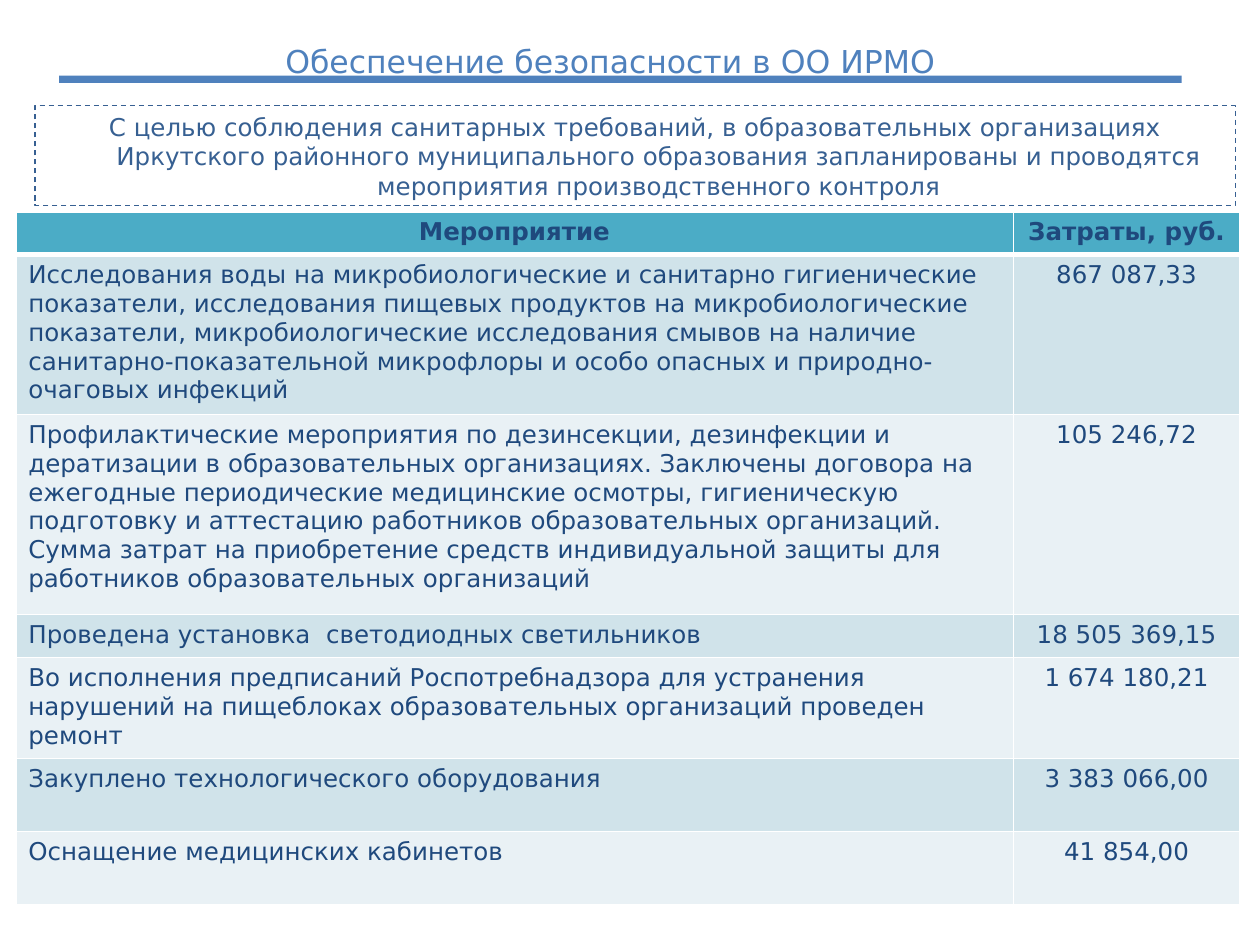
from typing import NamedTuple

from lxml.etree import SubElement
from pptx import Presentation
from pptx.dml.color import RGBColor
from pptx.enum.dml import MSO_LINE
from pptx.enum.shapes import MSO_SHAPE
from pptx.enum.text import MSO_ANCHOR, PP_ALIGN
from pptx.oxml.ns import qn
from pptx.util import Pt

FONT = "DejaVu Sans"
BLUE = RGBColor(0x4F, 0x81, 0xBD)
DARK_BLUE = RGBColor(0x37, 0x60, 0x92)
NAVY = RGBColor(0x1F, 0x49, 0x7D)
TEAL = RGBColor(0x4B, 0xAC, 0xC6)
BAND_DARK = RGBColor(0xD0, 0xE3, 0xEA)
BAND_LIGHT = RGBColor(0xE9, 0xF1, 0xF5)
WHITE = RGBColor(0xFF, 0xFF, 0xFF)


class Row(NamedTuple):
    activity: str
    cost: str
    height: float


HEADER = Row("Мероприятие", "Затраты, руб.", 24.5)
EXPENSES = [
    Row("Исследования воды на микробиологические и санитарно гигиенические "
        "показатели, исследования пищевых продуктов на микробиологические "
        "показатели, микробиологические исследования смывов на наличие "
        "санитарно-показательной микрофлоры и особо опасных и "
        "природно-очаговых инфекций", "867 087,33", 87.1),
    Row("Профилактические мероприятия по дезинсекции, дезинфекции и "
        "дератизации в образовательных организациях. Заключены договора на "
        "ежегодные периодические медицинские осмотры, гигиеническую "
        "подготовку и аттестацию работников образовательных организаций. "
        "Сумма затрат на приобретение средств индивидуальной защиты для "
        "работников образовательных организаций", "105 246,72", 114.5),
    Row("Проведена установка  светодиодных светильников", "18 505 369,15", 24.5),
    Row("Во исполнения предписаний Роспотребнадзора для устранения "
        "нарушений на пищеблоках образовательных организаций проведен "
        "ремонт", "1 674 180,21", 53.3),
    Row("Закуплено технологического оборудования", "3 383 066,00", 41.8),
    Row("Оснащение медицинских кабинетов", "41 854,00", 41.8),
]


def write(tf, text: str, size: float, color: RGBColor,
          align: PP_ALIGN = PP_ALIGN.CENTER, bold: bool = False):
    """Fill the first paragraph of a text frame and return it."""
    tf.word_wrap = True
    p = tf.paragraphs[0]
    p.alignment = align
    r = p.add_run()
    r.text = text
    r.font.name, r.font.size, r.font.bold = FONT, Pt(size), bold
    r.font.color.rgb = color
    return p


def add_border(cell, side: str, width: float) -> None:
    ln = SubElement(cell._tc.get_or_add_tcPr(), qn(f"a:ln{side}"), w=str(Pt(width)))
    fill = SubElement(ln, qn("a:solidFill"))
    SubElement(fill, qn("a:srgbClr"), val=str(WHITE))


def fill_row(table, index: int, row: Row) -> None:
    """Write one table row; the first is the header, the rest are banded."""
    header = index == 0
    fill = TEAL if header else (BAND_DARK if index % 2 else BAND_LIGHT)
    table.rows[index].height = Pt(row.height)
    for col, text in enumerate((row.activity, row.cost)):
        cell = table.cell(index, col)
        for side in "LRTB":
            thick = (header and side == "B") or (index == 1 and side == "T")
            add_border(cell, side, 3 if thick else 1)
        cell.fill.solid()
        cell.fill.fore_color.rgb = fill
        align = PP_ALIGN.CENTER if header or col else PP_ALIGN.LEFT
        write(cell.text_frame, text, 14, NAVY, align, header)


def main() -> None:
    prs = Presentation()
    prs.slide_width, prs.slide_height = Pt(720), Pt(540)
    s = prs.slides.add_slide(prs.slide_layouts[5])

    # Title and the bar under it
    title = s.shapes.title
    title.left, title.top, title.width, title.height = Pt(5.8), Pt(3.6), Pt(686), Pt(62)
    title.text_frame.vertical_anchor = MSO_ANCHOR.MIDDLE
    write(title.text_frame, "Обеспечение безопасности в ОО ИРМО", 18, BLUE)

    bar = s.shapes.add_shape(MSO_SHAPE.RECTANGLE, Pt(33.8), Pt(43.2), Pt(641.5), Pt(4.2))
    bar.shadow.inherit = False
    bar.fill.solid()
    bar.fill.fore_color.rgb = BLUE
    bar.line.fill.background()

    # Dashed introduction box with a hanging indent
    intro = s.shapes.add_textbox(Pt(20), Pt(60.5), Pt(686), Pt(56.8))
    intro.line.color.rgb = DARK_BLUE
    intro.line.width = Pt(0.75)
    intro.line.dash_style = MSO_LINE.DASH
    p = write(intro.text_frame,
              "С целью соблюдения санитарных требований, в образовательных "
              "организациях Иркутского районного муниципального образования "
              "запланированы и проводятся мероприятия производственного "
              "контроля", 14, DARK_BLUE)
    pPr = p._p.get_or_add_pPr()
    pPr.set("marL", str(Pt(27)))
    pPr.set("indent", str(-Pt(27)))

    # Table of expenses
    rows = [HEADER, *EXPENSES]
    table = s.shapes.add_table(len(rows), 2, Pt(9), Pt(121), Pt(699.5),
                               Pt(sum(row.height for row in rows))).table
    table.columns[0].width, table.columns[1].width = Pt(570), Pt(129.5)
    for index, row in enumerate(rows):
        fill_row(table, index, row)

    prs.save("out.pptx")


if __name__ == "__main__":
    main()
